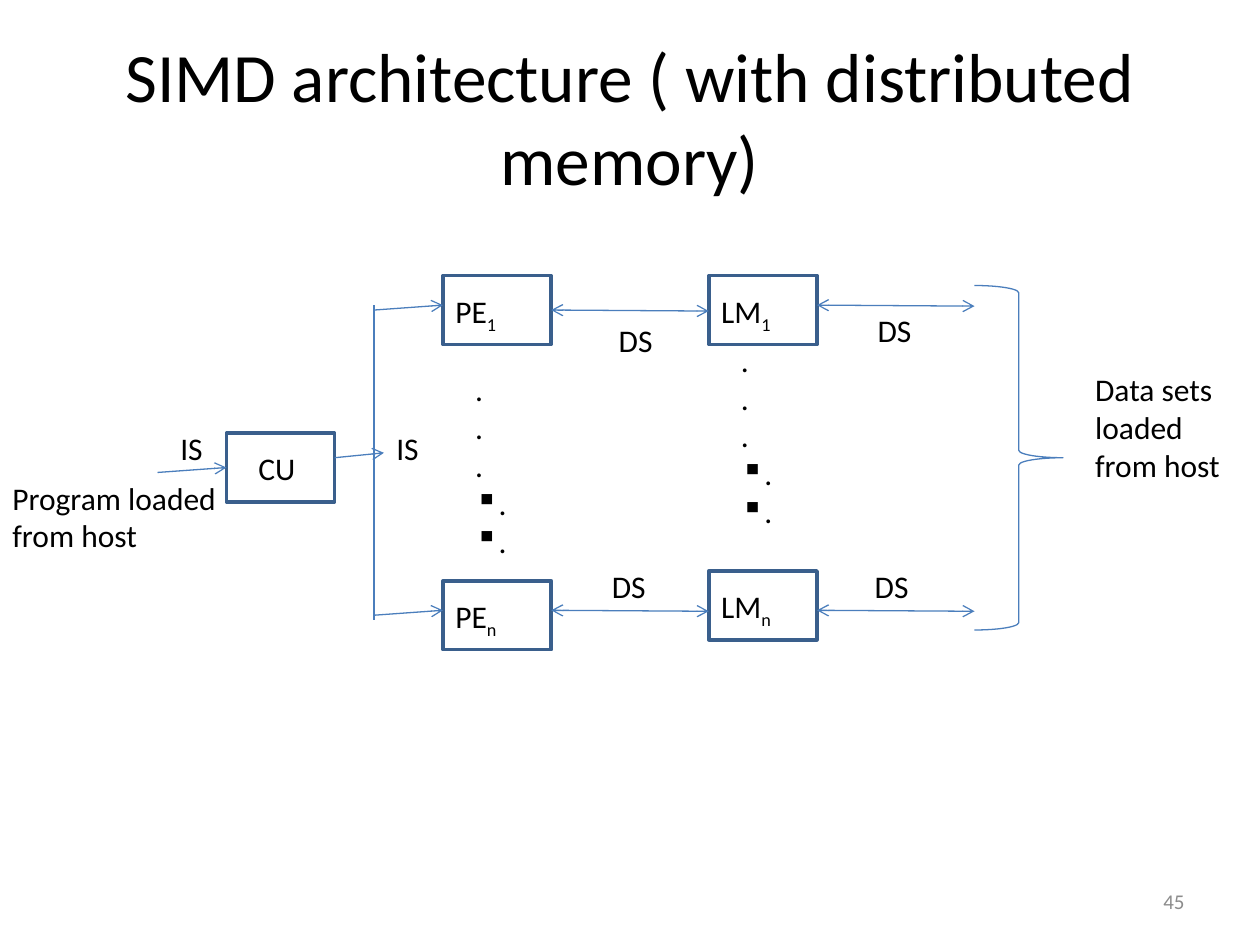
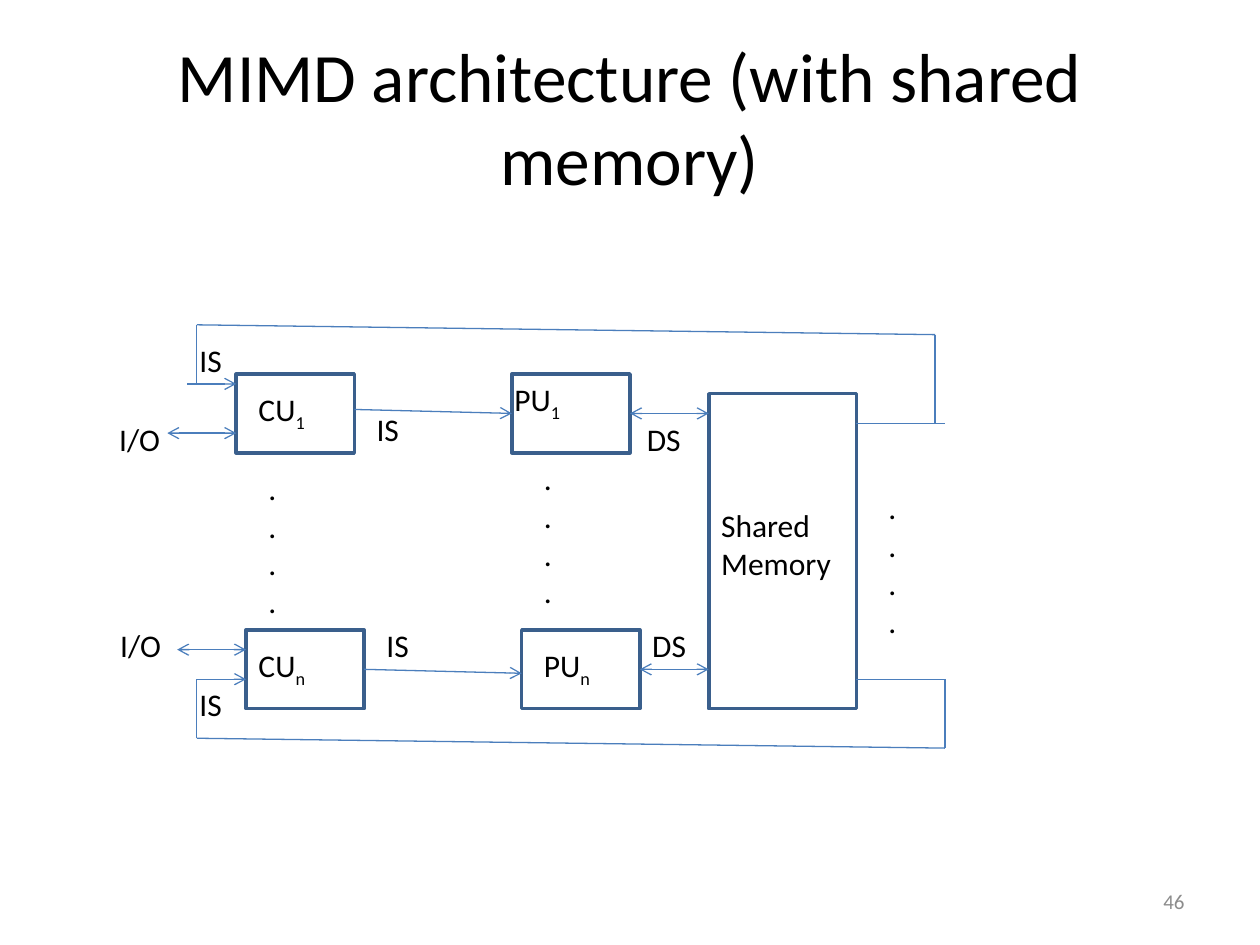
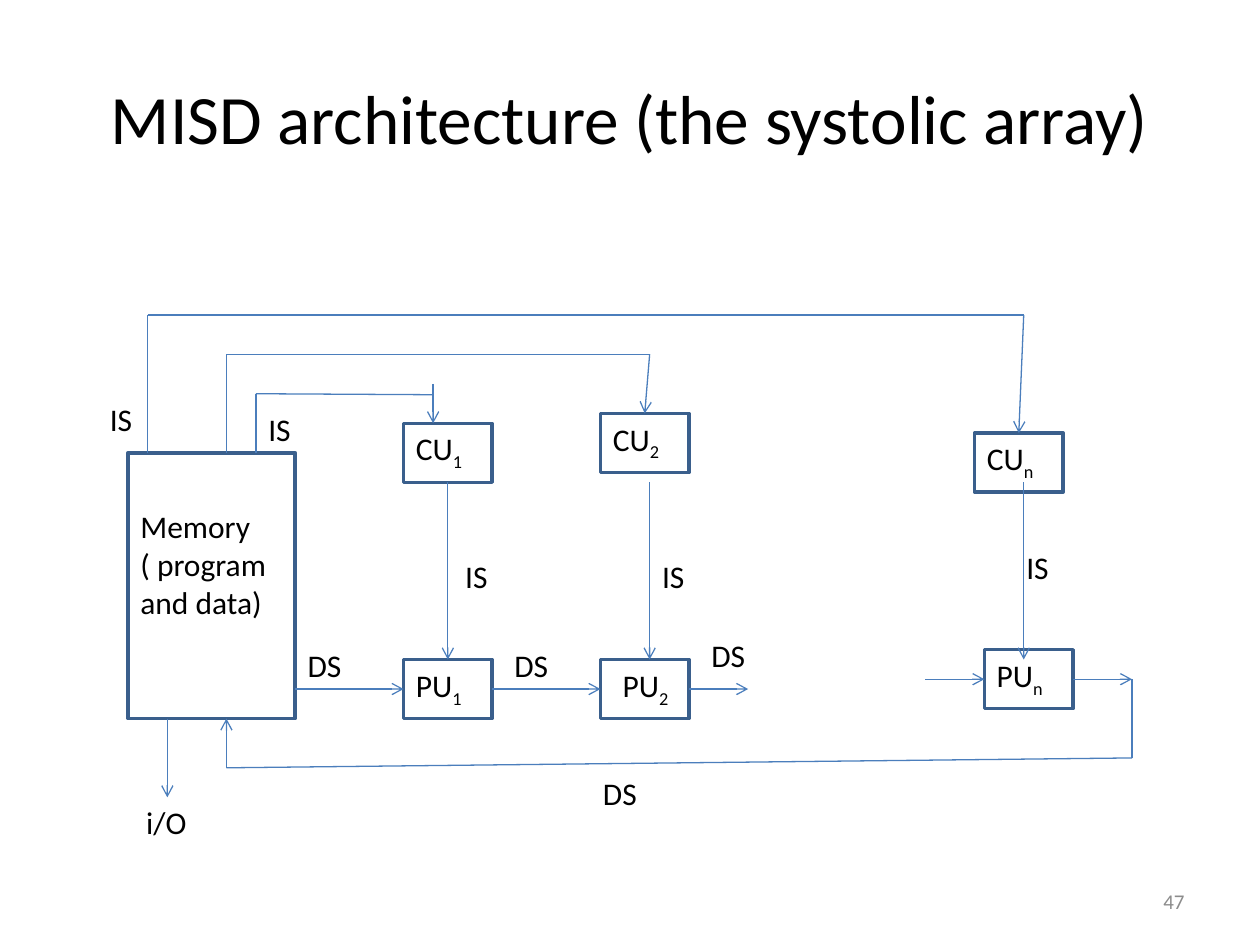
import itertools

import pptx
import pptx.dml.color
import pptx.enum.shapes
import pptx.enum.text
import pptx.oxml
import pptx.oxml.ns
import pptx.util
from lxml import etree

COLORS = {
    "text": "000000",
    "number": "8C8C8C",
    "fill": "FFFFFF",
    "outline": "3A5F8C",
    "wire": "4B7EBC",
}
FONT = "Calibri"
CELL = 25.4 / 128  # the slide is a grid of 128 by 96 cells
LABEL_HEIGHT = 5
ALIGN = pptx.enum.text.PP_ALIGN
SHAPES = pptx.enum.shapes.MSO_SHAPE


def grid(*cells):
    """Turn grid cells into lengths."""
    return [pptx.util.Cm(cell * CELL) for cell in cells]


def rgb(name):
    return pptx.dml.color.RGBColor.from_string(COLORS[name])


def add_tag(parent, tag, **attributes):
    return etree.SubElement(parent, pptx.oxml.ns.qn(tag), **attributes)


class Diagram:
    def __init__(self, deck):
        self.deck = deck
        self.page = None

    def start(self, title, number):
        self.page = self.deck.slides.add_slide(self.deck.slide_layouts[6])
        self.text(title, 6.4, 3.84, 115.2, 16, size=39.6, align=ALIGN.CENTER, middle=True)
        self.text(str(number), 91.8, 89, 29.8, 5, size=12, color="number",
                  align=ALIGN.RIGHT, middle=True)

    def text(self, words, left, top, width, height=LABEL_HEIGHT, size=18, color="text",
             align=ALIGN.LEFT, middle=False, indent=0):
        """Add a text box; a line is a paragraph, and what follows "_" is a subscript."""
        box = self.page.shapes.add_textbox(*grid(left, top, width, height))
        frame = box.text_frame
        frame.word_wrap = True
        if middle:
            frame.vertical_anchor = pptx.enum.text.MSO_ANCHOR.MIDDLE
        for index, line in enumerate(words.split("\n")):
            para = frame.add_paragraph() if index else frame.paragraphs[0]
            para.alignment = align
            para.font.name = FONT
            para.font.size = pptx.util.Pt(size)
            para.font.color.rgb = rgb(color)
            if indent:
                para._p.get_or_add_pPr().set("marL", str(grid(indent)[0]))
            base, _, subscript = line.partition("_")
            para.add_run().text = base
            if subscript:
                span = para.add_run()
                span.text = subscript
                span._r.get_or_add_rPr().set("baseline", "-25000")
        return frame

    def labels(self, words, width, *places):
        """Repeat a label; a place is left, top and, where needed, an indent."""
        for left, top, *indent in places:
            self.text(words, left, top, width, indent=sum(indent))

    def dots(self, left, top, width, plain, bulleted=0):
        count = plain + bulleted
        frame = self.text("\n".join("." * count), left, top, width, 3.85 * count + 1.3)
        for para in frame.paragraphs[plain:]:
            properties = para._p.get_or_add_pPr()
            bullet = pptx.oxml.parse_xml(
                f'<a:buChar {pptx.oxml.ns.nsdecls("a")} char="▪"/>')
            properties.insert(0, bullet)

    def shape(self, kind, left, top, width, height, line, points, fill=None):
        shape = self.page.shapes.add_shape(kind, *grid(left, top, width, height))
        shape.shadow.inherit = False
        shape.line.color.rgb = rgb(line)
        shape.line.width = pptx.util.Pt(points)
        if fill:
            shape.fill.solid()
            shape.fill.fore_color.rgb = rgb(fill)
        else:
            shape.fill.background()

    def unit(self, words, left, top, width, height, shift=(0, 0), label_height=LABEL_HEIGHT):
        """Add a box and its label, which starts at a shift from the box's corner."""
        self.shape(SHAPES.RECTANGLE, left, top, width, height, "outline", 2, "fill")
        self.text(words, left + shift[0], top + shift[1], width - 1, label_height)

    def wire(self, *points, head=False, tail=False):
        """Join points with straight lines; head and tail put arrows at the two ends."""
        last = len(points) - 2
        for index, (begin, end) in enumerate(itertools.pairwise(points)):
            line = self.page.shapes.add_connector(
                pptx.enum.shapes.MSO_CONNECTOR.STRAIGHT, *grid(*begin, *end))
            line.line.color.rgb = rgb("wire")
            line.line.width = pptx.util.Pt(0.75)
            outline = line.line._get_or_add_ln()
            if head and index == 0:
                add_tag(outline, "a:headEnd", type="arrow")
            if tail and index == last:
                add_tag(outline, "a:tailEnd", type="arrow")
            add_tag(line._element.spPr, "a:effectLst")

    def arrows(self, *pairs, both=False):
        for begin, end in pairs:
            self.wire(begin, end, head=both, tail=True)


def draw_simd(diagram):
    diagram.start("SIMD architecture ( with distributed memory)", 45)
    for words, left, top, shift in (
        ("CU", 23, 44, 2), ("LM_n", 72, 58, 0), ("PE_n", 45, 59, 0),
        ("LM_1", 72, 28, 0), ("PE_1", 45, 28, 0),
    ):
        diagram.unit(words, left, top, 11, 7, (shift, 1))

    diagram.wire((38, 31), (38, 63))
    diagram.arrows(((16, 48), (23, 47.5)), ((34, 46.5), (39, 46)))
    for top, element_top in ((31, 31.5), (62, 62)):
        diagram.arrows(((38, top + 0.5), (45, top)))
        diagram.arrows(((56, element_top), (72, element_top + 0.1)),
                       ((83, top), (99, top + 0.1)), both=True)

    diagram.labels("IS", 11, (12, 43, 5.06), (39, 43))
    diagram.labels("DS", 11, (58, 32, 3.6), (58, 57, 2.9), (84, 57, 3.6), (85, 31, 2.9))
    diagram.shape(SHAPES.RIGHT_BRACE, 99, 29, 9, 35, "wire", 0.75)
    diagram.text("Data sets loaded from host", 110, 37, 18, 13)
    diagram.text("Program loaded from host", 0, 48, 29, 9)
    for left, top in ((47, 37), (74, 34)):
        diagram.dots(left, top, 7, plain=3, bulleted=2)


def draw_mimd(diagram):
    diagram.start("MIMD architecture (with shared memory)", 46)
    for words, left, top, shift in (
        ("CU_1", 24, 38, (1, 1)), ("PU_n", 53, 64, (1, 1)),
        ("PU_1", 52, 38, (-1, 0)), ("CU_n", 25, 64, (0, 1)),
    ):
        diagram.unit(words, left, top, 12, 8, shift)
    diagram.unit("Shared Memory", 72, 40, 15, 32, (0, 10.8), 9)

    diagram.arrows(((36, 41.6), (52, 42)), ((37, 68), (53, 68.4)),
                   ((19, 39), (24, 39)), ((20, 69), (25, 69)))
    diagram.arrows(((64, 42), (72, 42)), ((65, 68), (72, 68)),
                   ((18, 66), (25, 66)), ((17, 44), (24, 44)), both=True)
    diagram.wire((20, 39), (20, 33), (95, 34), (95, 43))
    diagram.wire((87, 43), (96, 43))
    diagram.wire((20, 69), (20, 75), (96, 76), (96, 69), (87, 69))

    diagram.labels("IS", 11, (37, 41), (38, 63), (19, 69), (19, 34))
    diagram.labels("DS", 11, (63, 42, 1.45), (65, 63))
    diagram.labels("I/O", 19, (0, 42, 10.85), (3, 63, 7.95))
    for left, top in ((26, 47), (54, 46), (89, 49)):
        diagram.dots(left, top, 8, plain=4)


def draw_misd(diagram):
    diagram.start("MISD architecture (the systolic array)", 47)
    diagram.unit("Memory\n( program and data)", 13, 46, 17, 27, (0, 4.9), 13)
    for words, left, top, shift in (
        ("CU_1", 41, 43, 0), ("CU_2", 61, 42, 0), ("CU_n", 99, 44, 0),
        ("PU_n", 100, 66, 0), ("PU_2", 61, 67, 1), ("PU_1", 41, 67, 0),
    ):
        diagram.unit(words, left, top, 9, 6, (shift, 0))

    diagram.wire((15, 46), (15, 32), (104, 32), (103.5, 44), tail=True)
    diagram.wire((23, 46), (23, 36), (66, 36), (65.5, 42), tail=True)
    diagram.wire((26, 46), (26, 40), (44, 40.1))
    diagram.wire((115, 69), (115, 77), (23, 78), (23, 73), tail=True)
    diagram.arrows(((44, 39), (44, 43)), ((17, 73), (17, 81)))
    diagram.arrows(*(((left, 49), (left, 67)) for left in (45.5, 66, 104)))
    for begin, end, top in ((30, 41, 70), (50, 61, 70), (70, 76, 70),
                            (94, 100, 69), (109, 115, 69)):
        diagram.arrows(((begin, top), (end, top)))

    diagram.labels("IS", 8, (46, 56), (7, 40, 2.9), (26, 41), (66, 56), (103, 55))
    diagram.labels("DS", 8, (60, 78), (51, 65), (30, 65), (71, 64))
    diagram.labels("i/O", 11, (10, 81, 3.6))


def main():
    deck = pptx.Presentation()
    deck.slide_width, deck.slide_height = grid(128, 96)
    diagram = Diagram(deck)
    for draw in (draw_simd, draw_mimd, draw_misd):
        draw(diagram)
    deck.save("out.pptx")


if __name__ == "__main__":
    main()
